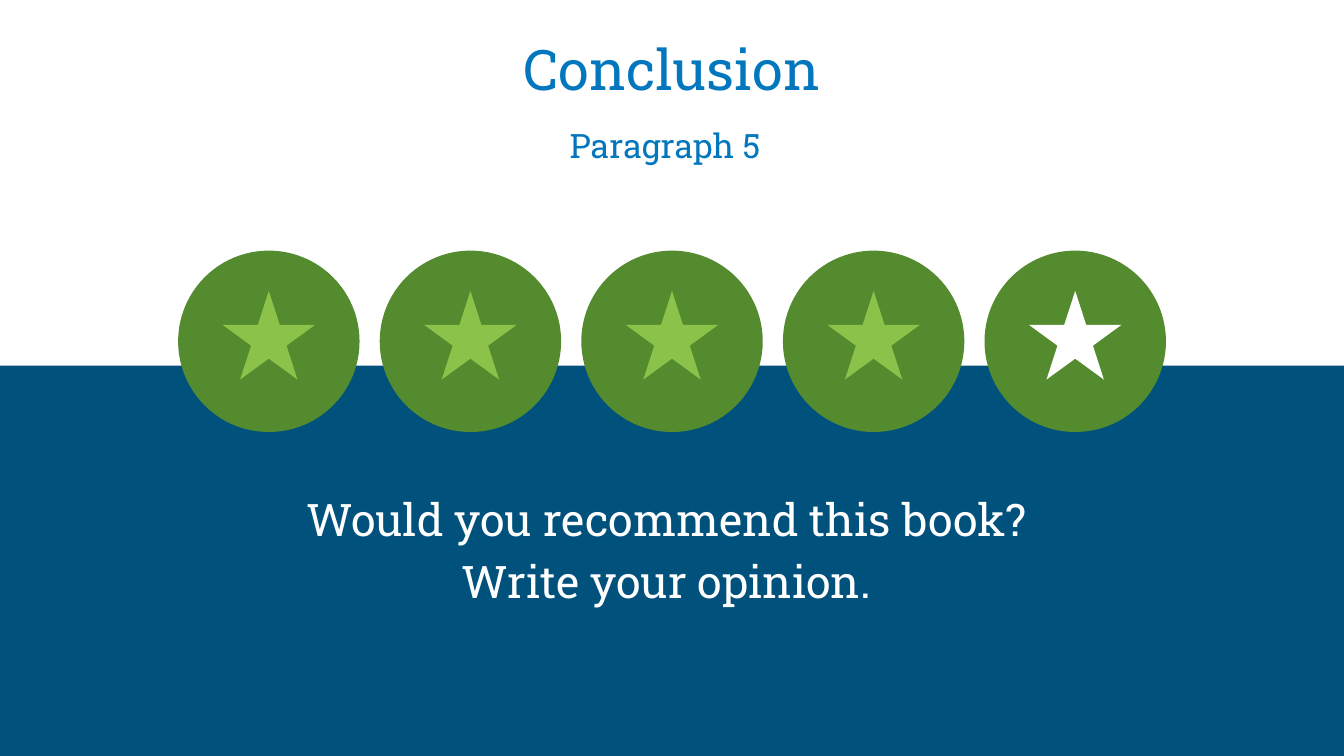
from pptx import Presentation
from pptx.dml.color import RGBColor
from pptx.enum.shapes import MSO_SHAPE
from pptx.enum.text import PP_ALIGN
from pptx.util import Inches, Pt

NAVY = RGBColor(0x00, 0x51, 0x7C)
BLUE = RGBColor(0x02, 0x77, 0xBD)
GREEN = RGBColor(0x55, 0x8B, 0x2F)
LIME = RGBColor(0x8B, 0xC3, 0x4A)
WHITE = RGBColor(0xFF, 0xFF, 0xFF)


class RatingSlide:
    """Draws the bands, rating badges and centred text of one slide."""

    font = "Roboto Slab"

    def __init__(self, page):
        self.page = page
        page.background.fill.solid()
        page.background.fill.fore_color.rgb = NAVY

    def shape(self, shapes, kind, left, top, width, height, color):
        shape = shapes.add_shape(kind, Inches(left), Inches(top), Inches(width), Inches(height))
        shape.shadow.inherit = False
        shape.fill.solid()
        shape.fill.fore_color.rgb = color
        shape.line.fill.background()

    def badge(self, left, top, star_color):
        shapes = self.page.shapes.add_group_shape().shapes
        self.shape(shapes, MSO_SHAPE.OVAL, left, top, 1.35, 1.35, GREEN)
        self.shape(shapes, MSO_SHAPE.STAR_5_POINT, left + 0.33, top + 0.3, 0.69, 0.66, star_color)

    def text(self, top, height, text, size, color, line_spacing=1.0):
        box = self.page.shapes.add_textbox(Inches(0.34), Inches(top), Inches(9.32), Inches(height))
        frame = box.text_frame
        frame.word_wrap = True
        frame.margin_top = frame.margin_bottom = Inches(0.1)
        frame.text = text
        for para in frame.paragraphs:
            para.alignment = PP_ALIGN.CENTER
            para.line_spacing = line_spacing
            for span in para.runs:
                self.style(span, size, color)
        return frame

    def style(self, span, size, color):
        span.font.name = self.font
        span.font.size = Pt(size)
        span.font.color.rgb = color


def main():
    deck = Presentation()
    deck.slide_width, deck.slide_height = Inches(10), Inches(10 * 9 / 16)
    page = deck.slides.add_slide(deck.slide_layouts[6])
    slide = RatingSlide(page)
    slide.shape(page.shapes, MSO_SHAPE.RECTANGLE, 0, 0, 10.02, 2.72, WHITE)

    subtitle = slide.text(0.16, 1.71, "Conclusion\nParagraph 5", 30, BLUE).paragraphs[1]
    subtitle.runs[0].font.size = Pt(18)
    space = subtitle.add_run()
    space.text = " "
    slide.style(space, 30, BLUE)

    for index, star_color in enumerate([LIME] * 4 + [WHITE]):
        slide.badge(1.325 + 1.5 * index, 1.865, star_color)
    slide.text(3.5, 1.76, "Would you recommend this book? \vWrite your opinion. ", 24, WHITE, line_spacing=1.15)
    deck.save("out.pptx")


if __name__ == "__main__":
    main()
